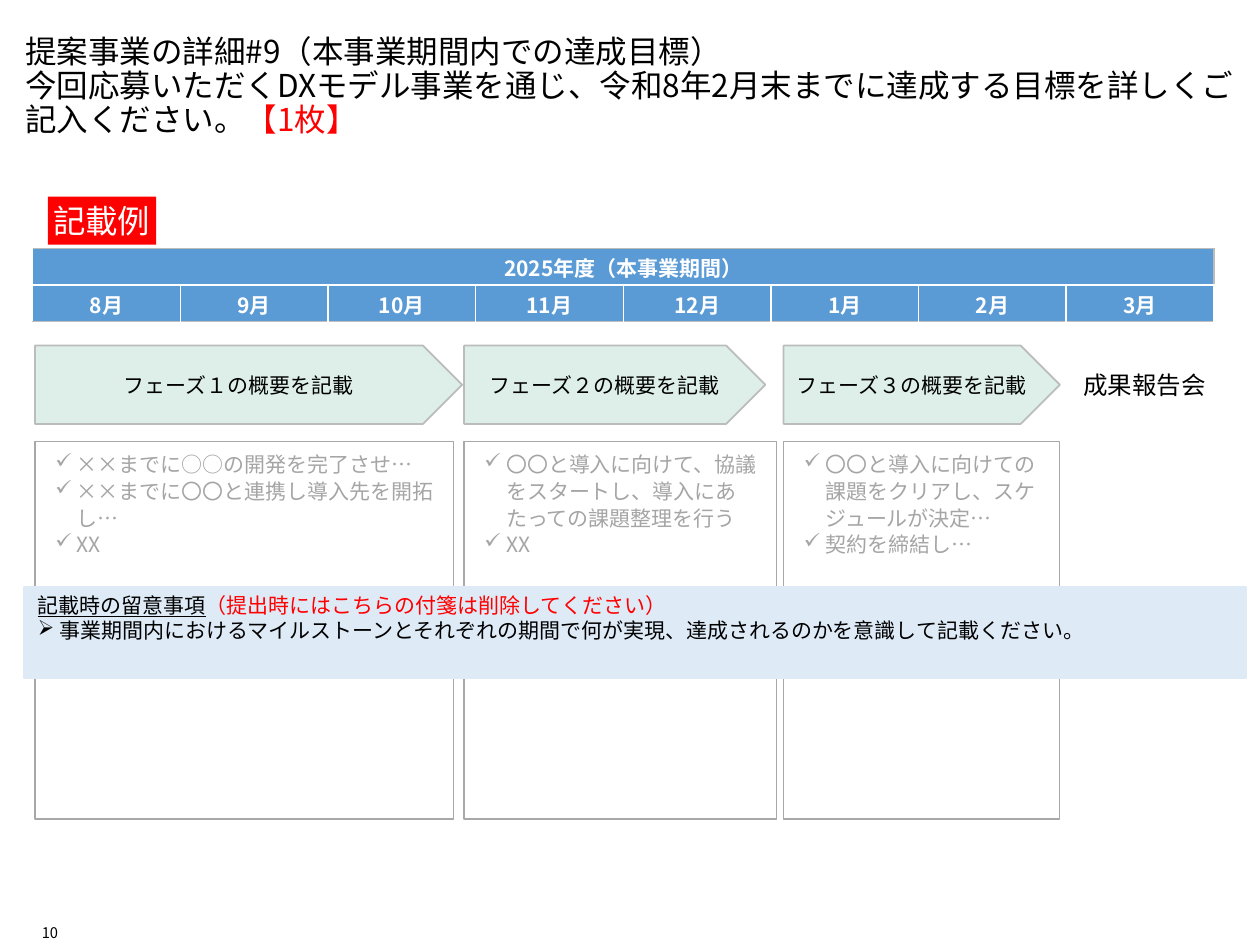
from dataclasses import dataclass

from lxml.etree import SubElement
from pptx import Presentation
from pptx.dml.color import RGBColor
from pptx.enum.shapes import MSO_SHAPE as SHAPE
from pptx.enum.text import MSO_ANCHOR as ANCHOR, MSO_AUTO_SIZE as FIT, PP_ALIGN as ALIGN
from pptx.oxml.ns import qn
from pptx.util import Pt

BLACK = RGBColor(0x00, 0x00, 0x00)
WHITE = RGBColor(0xFF, 0xFF, 0xFF)
RED = RGBColor(0xFF, 0x00, 0x00)
BLUE = RGBColor(0x5B, 0x9B, 0xD5)
MINT = RGBColor(0xDD, 0xEF, 0xE8)
PALE_BLUE = RGBColor(0xDE, 0xEB, 0xF7)
ARROW_EDGE = RGBColor(0xBB, 0xBC, 0xBC)
BOX_EDGE = RGBColor(0xA7, 0xA8, 0xAA)
TABLE_TOP = RGBColor(0xBB, 0xBB, 0xB8)
TABLE_BOTTOM = RGBColor(0xBF, 0xBF, 0xBF)
GRAY = RGBColor(0xA5, 0xA5, 0xA5)
FONT = "Noto Sans CJK JP"
BULLET_FONT = "Wingdings"
CHECK = "ü"
ARROWHEAD = "Ø"
MONTHS = ["8月", "9月", "10月", "11月", "12月", "1月", "2月", "3月"]


@dataclass
class Box:
    x: float
    y: float
    w: float
    h: float

    def emu(self) -> list:
        return [Pt(v) for v in (self.x, self.y, self.w, self.h)]


@dataclass
class Phase:
    title: str
    x: float
    arrow_w: float
    box_w: float
    goals: list


PHASES = [
    Phase("フェーズ１の概要を記載", 20, 244.1, 239.2,
          ["××までに○○の開発を完了させ…", "××までに〇〇と連携し導入先を開拓し…", "XX"]),
    Phase("フェーズ２の概要を記載", 265.2, 172.1, 178.6,
          ["〇〇と導入に向けて、協議をスタートし、導入にあたっての課題整理を行う", "XX"]),
    Phase("フェーズ３の概要を記載", 447.8, 157.9, 157.9,
          ["〇〇と導入に向けての課題をクリアし、スケジュールが決定…", "契約を締結し…"]),
]


def set_frame(tf, insets: tuple, anchor=ANCHOR.TOP, wrap: bool = True) -> None:
    tf.word_wrap = wrap
    tf.vertical_anchor = anchor
    tf.margin_left, tf.margin_top, tf.margin_right, tf.margin_bottom = map(Pt, insets)


def add_run(p, text: str, size: float, color: RGBColor, bold: bool = False,
            underline: bool = False, font: str = FONT) -> None:
    r = p.add_run()
    r.text = text
    r.font.size = Pt(size)
    r.font.color.rgb = color
    r.font.bold = bold
    r.font.underline = underline
    r.font.name = font
    SubElement(r.font._element, qn("a:ea")).set("typeface", FONT)


def set_bullet(p, char: str, color: RGBColor, left: float, hang: float) -> None:
    pPr = p._p.get_or_add_pPr()
    pPr.set("marL", str(Pt(left)))
    pPr.set("indent", str(-Pt(hang)))
    clr = SubElement(pPr, qn("a:buClr"))
    SubElement(clr, qn("a:srgbClr")).set("val", str(color))
    SubElement(pPr, qn("a:buFont"), typeface=BULLET_FONT, pitchFamily="2", charset="2")
    SubElement(pPr, qn("a:buChar")).set("char", char)


def add_box(s, kind, box: Box, fill: RGBColor, line: RGBColor | None = None, width: float = 1):
    sp = s.shapes.add_shape(kind, *box.emu())
    sp.shadow.inherit = False
    sp.fill.solid()
    sp.fill.fore_color.rgb = fill
    if line is None:
        sp.line.fill.background()
    else:
        sp.line.color.rgb = line
        sp.line.width = Pt(width)
    sp.text_frame.paragraphs[0].alignment = ALIGN.LEFT
    return sp


def add_text(s, box: Box, insets: tuple, anchor=ANCHOR.TOP, wrap: bool = True):
    tf = s.shapes.add_textbox(*box.emu()).text_frame
    set_frame(tf, insets, anchor, wrap)
    return tf


def set_border(cell, side: str, color: RGBColor) -> None:
    ln = SubElement(cell._tc.get_or_add_tcPr(), qn(f"a:{side}"), w=str(Pt(1)))
    fill = SubElement(ln, qn("a:solidFill"))
    SubElement(fill, qn("a:srgbClr")).set("val", str(color))


def style_cell(cell, text: str, top: RGBColor, right: RGBColor, bottom: RGBColor) -> None:
    for side, color in (("lnL", WHITE), ("lnR", right), ("lnT", top), ("lnB", bottom)):
        set_border(cell, side, color)
    cell.fill.solid()
    cell.fill.fore_color.rgb = BLUE
    cell.vertical_anchor = ANCHOR.MIDDLE
    cell.margin_left = cell.margin_right = Pt(3)
    cell.margin_top = cell.margin_bottom = 0
    p = cell.text_frame.paragraphs[0]
    p.alignment = ALIGN.CENTER
    p.line_spacing = 1.06
    if text:
        add_run(p, text, 12, WHITE, bold=True)


def add_calendar(s, box: Box) -> None:
    table = s.shapes.add_table(2, len(MONTHS), *box.emu()).table
    for col in table.columns:
        col.width = Pt(box.w / len(MONTHS))
    table.cell(0, 0).merge(table.cell(0, len(MONTHS) - 1))
    for i, month in enumerate(MONTHS):
        heading = "2025年度（本事業期間）" if i == 0 else ""
        style_cell(table.cell(0, i), heading, TABLE_TOP, TABLE_TOP, WHITE)
        style_cell(table.cell(1, i), month, WHITE, WHITE, TABLE_BOTTOM)


def add_phase(s, phase: Phase) -> None:
    arrow = add_box(s, SHAPE.PENTAGON, Box(phase.x, 197.5, phase.arrow_w, 44.8), MINT, ARROW_EDGE)
    set_frame(arrow.text_frame, (0, 0, 0, 0), ANCHOR.MIDDLE)
    p = arrow.text_frame.paragraphs[0]
    p.alignment = ALIGN.CENTER
    add_run(p, phase.title, 12, BLACK)

    goals = add_box(s, SHAPE.RECTANGLE, Box(phase.x, 252.4, phase.box_w, 215.6),
                    WHITE, BOX_EDGE, 0.75)
    tf = goals.text_frame
    set_frame(tf, (5, 5, 5, 5))
    for i, goal in enumerate(phase.goals):
        p = tf.paragraphs[0] if i == 0 else tf.add_paragraph()
        p.alignment = ALIGN.LEFT
        p.line_spacing = 1.06
        set_bullet(p, CHECK, GRAY, 19, 12.5)
        add_run(p, goal, 12, GRAY)


def add_note(s, box: Box) -> None:
    tf = add_box(s, SHAPE.RECTANGLE, box, PALE_BLUE, PALE_BLUE).text_frame
    set_frame(tf, (8, 3, 3, 3))
    p = tf.paragraphs[0]
    add_run(p, "記載時の留意事項", 12, BLACK, underline=True)
    add_run(p, "（提出時にはこちらの付箋は削除してください）", 12, RED)
    p = tf.add_paragraph()
    p.alignment = ALIGN.LEFT
    set_bullet(p, ARROWHEAD, BLACK, 12.25, 12.25)
    add_run(p, "事業期間内におけるマイルストーンとそれぞれの期間で何が実現、達成されるのかを意識して記載ください。",
            12, BLACK)


def main() -> None:
    prs = Presentation()
    prs.slide_width, prs.slide_height = Pt(720), Pt(540)
    s = prs.slides.add_slide(prs.slide_layouts[6])

    p = add_text(s, Box(14.4, 20.9, 692.6, 67.7), (0, 0, 0, 0)).paragraphs[0]
    p.line_spacing = 0.9
    add_run(p, "提案事業の詳細#9（本事業期間内での達成目標）", 18, BLACK)
    p.add_line_break()
    add_run(p, "今回応募いただくDXモデル事業を通じ、令和8年2月末までに達成する目標を詳しくご記入ください。", 18, BLACK)
    add_run(p, "【1枚】", 18, RED)

    p = add_text(s, Box(20.2, 525, 13, 13), (0, 0, 0, 0), ANCHOR.BOTTOM, False).paragraphs[0]
    p.alignment = ALIGN.RIGHT
    add_run(p, "10", 8.4, BLACK)

    add_calendar(s, Box(18.7, 142, 675, 41.8))
    for phase in PHASES:
        add_phase(s, phase)

    tf = add_box(s, SHAPE.RECTANGLE, Box(27.4, 112.4, 61.8, 27.4), RED).text_frame
    set_frame(tf, (3, 3, 3, 3), ANCHOR.MIDDLE, False)
    tf.auto_size = FIT.SHAPE_TO_FIT_TEXT
    add_run(tf.paragraphs[0], "記載例", 18.5, WHITE)

    tf = add_text(s, Box(612, 208, 87.8, 24.3), (7.2, 3.6, 7.2, 3.6), wrap=False)
    tf.auto_size = FIT.SHAPE_TO_FIT_TEXT
    add_run(tf.paragraphs[0], "成果報告会", 14, BLACK, font="Calibri")

    add_note(s, Box(13.7, 335.5, 698.4, 51.9))
    prs.save("out.pptx")


if __name__ == "__main__":
    main()
